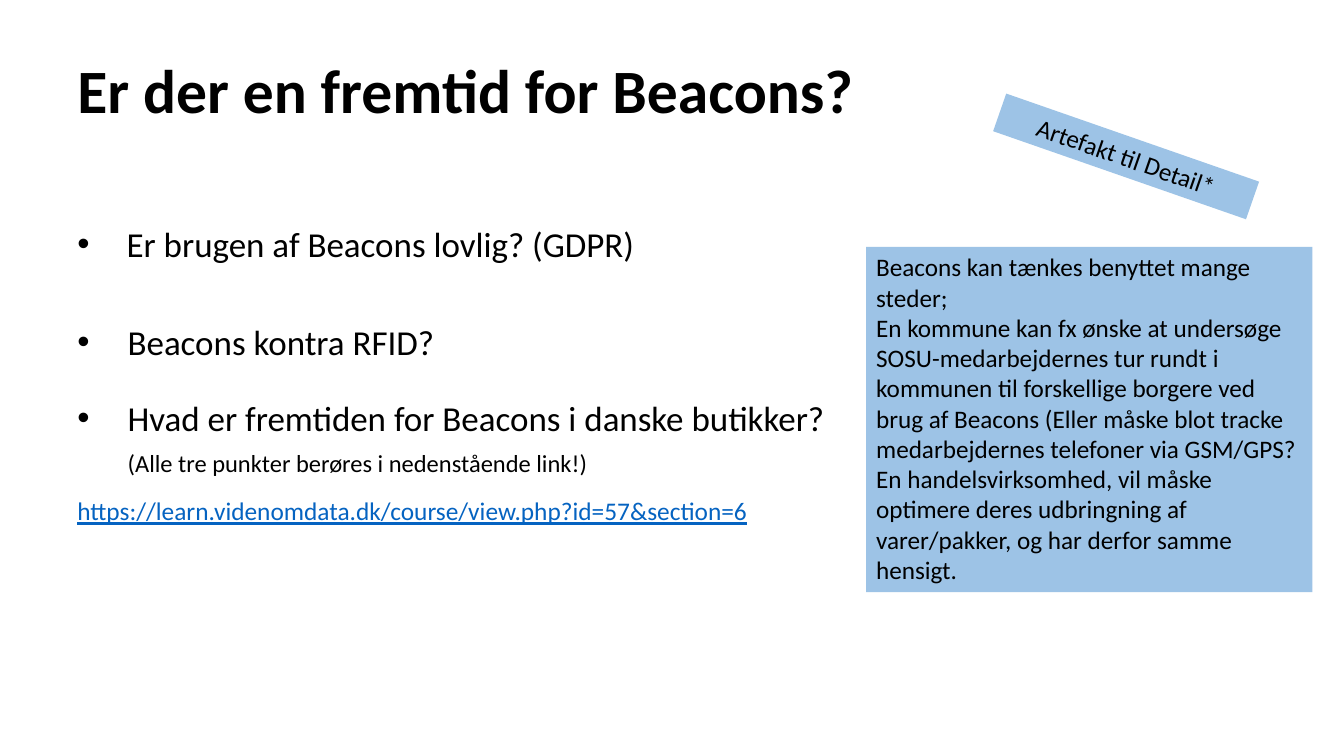
from lxml.etree import SubElement
from pptx import Presentation
from pptx.dml.color import RGBColor
from pptx.enum.shapes import MSO_SHAPE
from pptx.enum.text import MSO_ANCHOR, MSO_AUTO_SIZE, PP_ALIGN
from pptx.oxml.ns import qn
from pptx.util import Emu, Pt

PX = 9525
BLACK = "000000"
LINK_BLUE = "0563C1"
PALE_BLUE = "9DC3E6"

QUESTION = {"size": Pt(25)}
ASIDE = {"size": Pt(17.5)}
LINK = {"size": Pt(18.1), "underline": True}
POINTS = [
    ("Er brugen af Beacons lovlig? (GDPR)", QUESTION, BLACK, 47, True, 0),
    ("Beacons kontra RFID?", QUESTION, BLACK, 48, True, 40),
    ("Hvad er fremtiden for Beacons i danske butikker?", QUESTION, BLACK, 48, True, 24.5),
    ("(Alle tre punkter berøres i nedenstående link!)", ASIDE, BLACK, 48, False, 6.5),
    ("https://learn.videnomdata.dk/course/view.php?id=57&section=6",
     LINK, LINK_BLUE, 0, False, 13),
]
USES = [
    "Beacons kan tænkes benyttet mange steder;",
    "En kommune kan fx ønske at undersøge SOSU-medarbejdernes tur rundt i "
    "kommunen til forskellige borgere ved brug af Beacons (Eller måske blot "
    "tracke medarbejdernes telefoner via GSM/GPS?",
    "En handelsvirksomhed, vil måske optimere deres udbringning af "
    "varer/pakker, og har derfor samme hensigt.",
]


def px(length):
    return Emu(length * PX)


def color(hex_code):
    return RGBColor.from_string(hex_code)


def apply(target, values):
    for name, value in values.items():
        setattr(target, name, value)


def place(element, left, top, width, height):
    apply(element, {"left": px(left), "top": px(top),
                    "width": px(width), "height": px(height)})


def write(paragraph, text, font_values, hex_code=BLACK):
    paragraph.text = text
    apply(paragraph.font, {"name": "Calibri", **font_values})
    paragraph.font.color.rgb = color(hex_code)


def paragraphs(frame, count):
    return [frame.paragraphs[0]] + [frame.add_paragraph() for _ in range(count - 1)]


def indent(paragraph, margin, bulleted):
    properties = paragraph._p.get_or_add_pPr()
    properties.set("marL", str(px(margin)))
    properties.set("indent", str(px(-margin if bulleted else 0)))
    if bulleted:
        SubElement(properties, qn("a:buFont")).set("typeface", "Arial")
        SubElement(properties, qn("a:buChar")).set("char", "•")
    else:
        SubElement(properties, qn("a:buNone"))


def add_title(slide, text):
    title = slide.shapes.title
    place(title, 64, 29, 761, 120)
    apply(title.text_frame, {"vertical_anchor": MSO_ANCHOR.MIDDLE,
                             "auto_size": MSO_AUTO_SIZE.NONE})
    heading = title.text_frame.paragraphs[0]
    write(heading, text, {"size": Pt(44), "bold": True})
    apply(heading, {"alignment": PP_ALIGN.LEFT, "line_spacing": 0.9})


def add_points(slide, points):
    body = slide.placeholders[1]
    place(body, 64, 176, 1187, 492)
    apply(body.text_frame, {"margin_top": px(36), "auto_size": MSO_AUTO_SIZE.NONE,
                            "vertical_anchor": MSO_ANCHOR.TOP})
    rows = paragraphs(body.text_frame, len(points))
    for row, (text, font_values, hex_code, margin, bulleted, gap) in zip(rows, points):
        indent(row, margin, bulleted)
        write(row, text, font_values, hex_code)
        apply(row, {"space_before": Pt(gap), "line_spacing": 1.0})


def add_note(slide, box, lines, alignment, rotation=0):
    note = slide.shapes.add_shape(MSO_SHAPE.RECTANGLE, *map(px, box))
    note.rotation = rotation
    note.shadow.inherit = False
    note.fill.solid()
    note.fill.fore_color.rgb = color(PALE_BLUE)
    note.line.fill.background()
    apply(note.text_frame, {"word_wrap": True, "vertical_anchor": MSO_ANCHOR.TOP,
                            "auto_size": MSO_AUTO_SIZE.SHAPE_TO_FIT_TEXT})
    for row, text in zip(paragraphs(note.text_frame, len(lines)), lines):
        write(row, text, {"size": Pt(18)})
        row.alignment = alignment


def main():
    deck = Presentation()
    apply(deck, {"slide_width": px(1280), "slide_height": px(720)})
    slide = deck.slides.add_slide(deck.slide_layouts[1])
    add_title(slide, "Er der en fremtid for Beacons?")
    add_points(slide, POINTS)
    add_note(slide, (945, 130, 255, 38), ["Artefakt til Detail*"], PP_ALIGN.CENTER, 19.2)
    add_note(slide, (825, 235, 425, 329), USES, PP_ALIGN.LEFT)
    deck.save("out.pptx")


if __name__ == "__main__":
    main()
